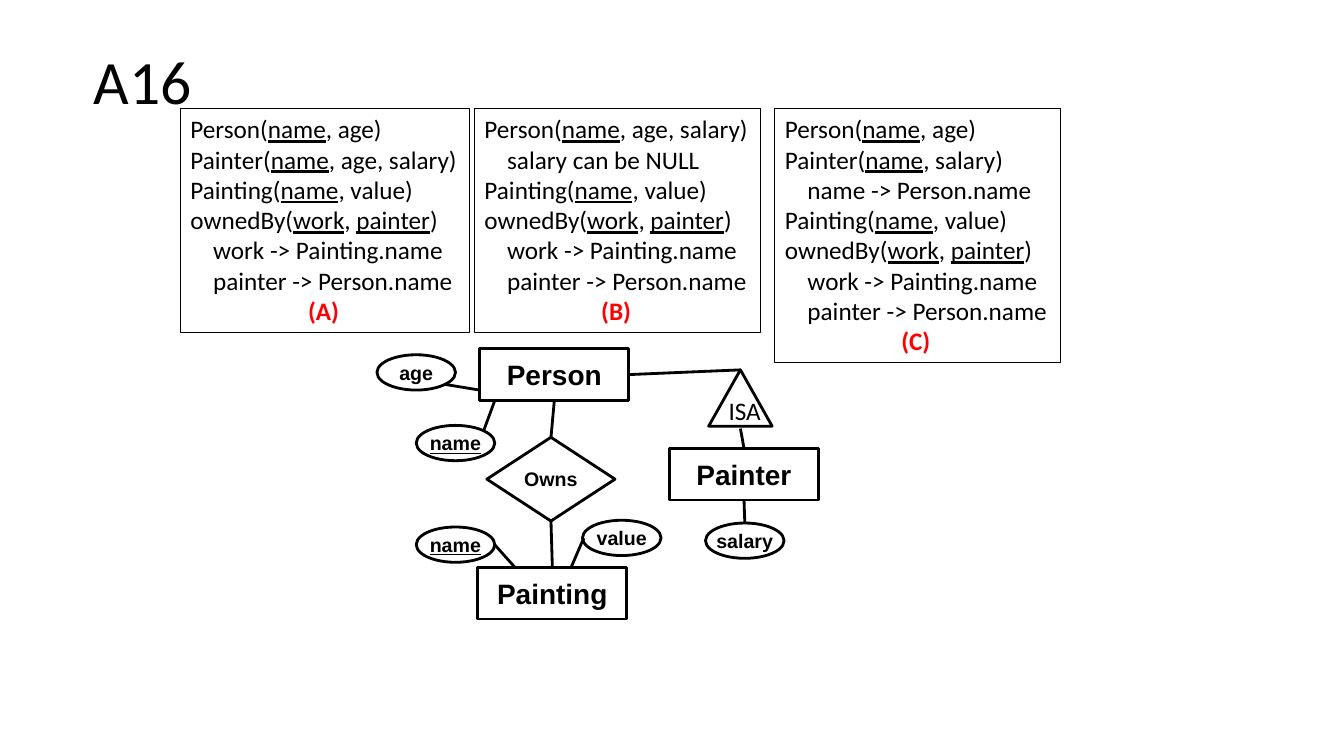
from pptx import Presentation
from pptx.dml.color import RGBColor
from pptx.enum.shapes import MSO_CONNECTOR as CONNECTOR, MSO_SHAPE as SHAPE
from pptx.enum.text import MSO_ANCHOR as ANCHOR, MSO_AUTO_SIZE as AUTO_SIZE, PP_ALIGN as ALIGN
from pptx.oxml.ns import qn
from pptx.util import Cm, Pt
from lxml.etree import SubElement

BLACK = RGBColor(0, 0, 0)
RED = RGBColor(0xFF, 0, 0)
TOP, BOTTOM, RIGHT = 0, 2, 3
INDENT = Cm(0.57)

# Underscores enclose key attributes, ">" marks an indented line
PAINTING = "Painting(_name_, value)"
OWNED_BY = ["ownedBy(_work_, _painter_)", ">work -> Painting.name", ">painter -> Person.name"]
SCHEMAS = [
    ("(A)", 4.55, 7.29, 5.64,
     ["Person(_name_, age)", "Painter(_name_, age, salary)", PAINTING, *OWNED_BY]),
    ("(B)", 11.96, 7.21, 5.64,
     ["Person(_name_, age, salary)", ">salary can be NULL", PAINTING, *OWNED_BY]),
    ("(C)", 19.53, 7.19, 6.4,
     ["Person(_name_, age)", "Painter(_name_, salary)", ">name -> Person.name", PAINTING, *OWNED_BY]),
]


def format_run(run, size, font="Calibri", color=BLACK, bold=False, underline=False):
    run.font.size = Pt(size)
    run.font.name = font
    run.font.color.rgb = color
    run.font.bold = bold
    run.font.underline = underline


def add_title(slide, text):
    title = slide.shapes.title
    title.left, title.top, title.width, title.height = Cm(2.11), Cm(0.28), Cm(29.21), Cm(3.68)
    title.text_frame.text = text
    title.text_frame.vertical_anchor = ANCHOR.MIDDLE
    heading = title.text_frame.paragraphs[0]
    heading.alignment = ALIGN.LEFT
    heading.line_spacing = 0.9
    format_run(heading.runs[0], 44)


def add_text(slide, left, top, width, height):
    box = slide.shapes.add_textbox(Cm(left), Cm(top), Cm(width), Cm(height))
    box.text_frame.word_wrap = False
    box.text_frame.auto_size = AUTO_SIZE.SHAPE_TO_FIT_TEXT
    return box


def add_schema(slide, letter, left, width, height, relations):
    schema = add_text(slide, left, 2.74, width, height)
    schema.line.color.rgb = BLACK
    schema.line.width = Pt(0.75)
    frame = schema.text_frame
    for index, relation in enumerate(relations):
        paragraph = frame.add_paragraph() if index else frame.paragraphs[0]
        if relation.startswith(">"):
            paragraph._p.get_or_add_pPr().set("marL", str(INDENT))
        for part, text in enumerate(relation.lstrip(">").split("_")):
            run = paragraph.add_run()
            run.text = text
            format_run(run, 18, underline=part % 2 == 1)
    answer = frame.add_paragraph()
    answer.text = letter
    answer.alignment = ALIGN.CENTER
    format_run(answer.runs[0], 18, color=RED, bold=True)


def add_node(slide, kind, left, top, width, height, label="", size=14, key=False):
    node = slide.shapes.add_shape(kind, Cm(left), Cm(top), Cm(width), Cm(height))
    node.shadow.inherit = False
    node.fill.background()
    node.line.color.rgb = BLACK
    node.line.width = Pt(2)
    if label:
        frame = node.text_frame
        frame.text = label
        frame.word_wrap = False
        frame.vertical_anchor = ANCHOR.MIDDLE
        frame.paragraphs[0].alignment = ALIGN.CENTER
        format_run(frame.paragraphs[0].runs[0], size, "Arial", bold=True, underline=key)
    return node


def add_entity(slide, label, left, top):
    return add_node(slide, SHAPE.RECTANGLE, left, top, 3.76, 1.3, label, 20)


def add_attribute(slide, label, left, top, key=False):
    return add_node(slide, SHAPE.OVAL, left, top, 1.98, 0.89, label, key=key)


def add_link(slide, start=(0, 0), end=(0, 0), start_site=None, end_site=None):
    """Joins points in cm, or (node, site) pairs where a site is given."""
    link = slide.shapes.add_connector(CONNECTOR.STRAIGHT, *map(Cm, start + end))
    if start_site:
        link.begin_connect(*start_site)
    if end_site:
        link.end_connect(*end_site)
    link.line.color.rgb = BLACK
    link.line.width = Pt(2)
    SubElement(link._element.spPr, qn("a:effectLst"))


def add_diagram(slide):
    # Entities, relationship and hierarchy
    painter = add_entity(slide, "Painter", 16.87, 11.3)
    painting = add_entity(slide, "Painting", 12.04, 14.3)
    person = add_entity(slide, "Person", 12.09, 8.79)
    owns = add_node(slide, SHAPE.DIAMOND, 12.27, 11.02, 3.23, 2.11, "Owns")
    isa = add_node(slide, SHAPE.ISOSCELES_TRIANGLE, 17.86, 9.32, 1.6, 1.42)
    isa_label = add_text(slide, 18.11, 9.83, 1.32, 1.02)
    isa_label.text_frame.text = "ISA"
    format_run(isa_label.text_frame.paragraphs[0].runs[0], 18)

    # Attributes
    add_attribute(slide, "age", 9.5, 8.94)
    add_attribute(slide, "name", 10.49, 10.72, key=True)
    add_attribute(slide, "name", 10.49, 13.28, key=True)
    add_attribute(slide, "value", 14.68, 13.11)
    salary = add_attribute(slide, "salary", 17.78, 13.18)

    # Links between entities
    add_link(slide, start_site=(person, BOTTOM), end_site=(owns, TOP))
    add_link(slide, start_site=(owns, BOTTOM), end_site=(painting, TOP))
    add_link(slide, start_site=(isa, TOP), end_site=(person, RIGHT))
    add_link(slide, end=(18.66, 10.8), start_site=(painter, TOP))

    # Links to attributes
    add_link(slide, start_site=(painter, BOTTOM), end_site=(salary, TOP))
    add_link(slide, (11.18, 9.68), (12.09, 9.83))
    add_link(slide, (12.47, 10.09), (12.19, 10.85))
    add_link(slide, (12.98, 14.3), (12.47, 13.73))
    add_link(slide, (14.71, 13.56), (14.4, 14.28))


def main():
    deck = Presentation()
    deck.slide_width, deck.slide_height = Cm(33.87), Cm(19.05)
    slide = deck.slides.add_slide(deck.slide_layouts[5])
    add_title(slide, "A16")
    add_diagram(slide)
    for schema in SCHEMAS:
        add_schema(slide, *schema)
    deck.save("out.pptx")


if __name__ == "__main__":
    main()
